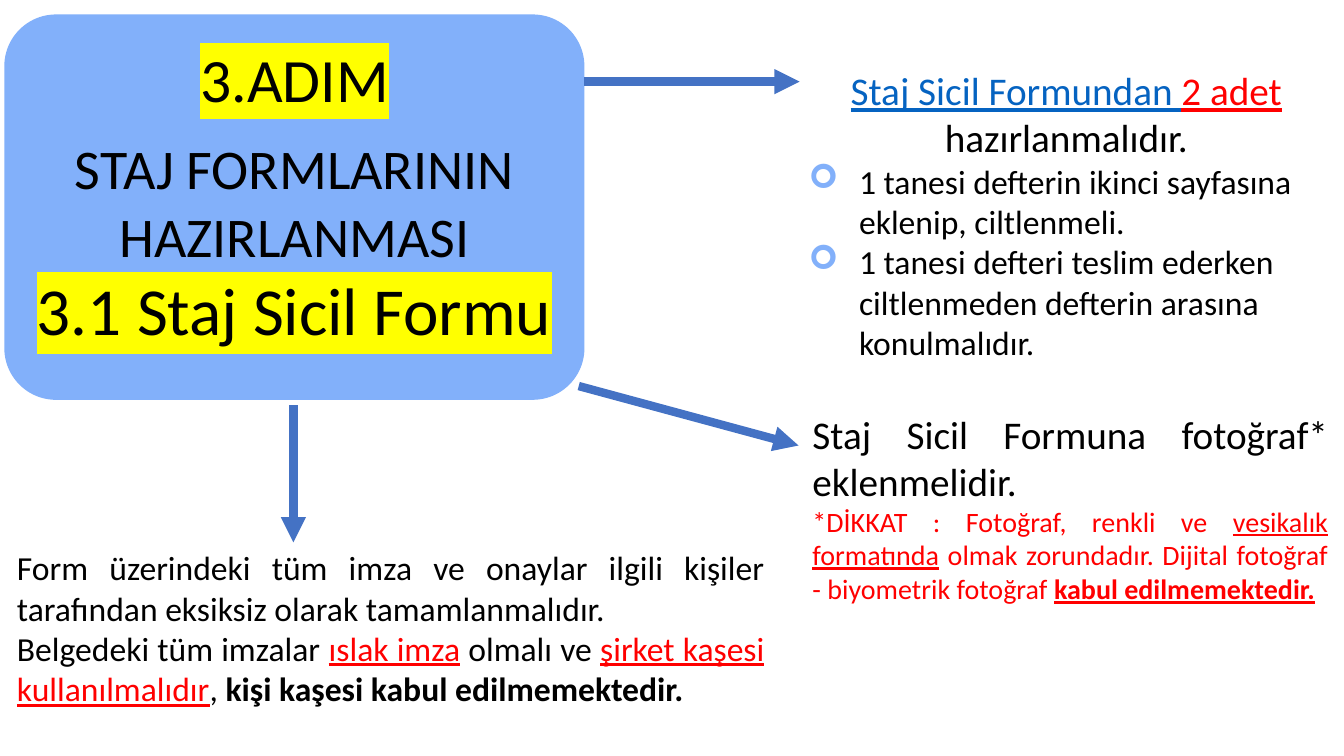
from lxml.etree import SubElement
from pptx import Presentation
from pptx.dml.color import RGBColor
from pptx.enum.shapes import MSO_CONNECTOR as Connector, MSO_SHAPE as Shape
from pptx.enum.text import MSO_ANCHOR as Anchor, MSO_AUTO_SIZE as AutoSize, PP_ALIGN as Align
from pptx.oxml.ns import qn
from pptx.util import Inches, Pt

BLACK, RED, LINK = "000000", "FF0000", "0563C1"
CARD, ARROW, YELLOW = "82B0FA", "4472C4", "FFFF00"


def colour(value):
    return RGBColor.from_string(value)


def span(text, ink=BLACK, bold=False, underline=False, mark=None):
    return text, ink, bold, underline, mark


class StepSlide:
    font = "Calibri"

    def __init__(self, deck):
        self.page = deck.slides.add_slide(deck.slide_layouts[1])
        self.title, self.body = self.page.placeholders

    def place(self, box, left, top, width, height):
        box.left, box.top = Inches(left), Inches(top)
        box.width, box.height = Inches(width), Inches(height)

    def frame(self, box, anchor=Anchor.TOP):
        frame = box.text_frame
        frame.word_wrap = True
        frame.auto_size = AutoSize.NONE
        frame.vertical_anchor = anchor
        return frame

    def add_para(self, frame, size, spans, align=Align.LEFT, bullet=None):
        """Fill the empty first paragraph, or append a new one."""
        para = frame.paragraphs[0]
        if para.runs:
            para = frame.add_paragraph()
        para.alignment = align
        para.line_spacing = 1.0
        para.space_before = para.space_after = Pt(0)
        props = para._p.get_or_add_pPr()
        indent = Inches(0.5) if bullet else 0
        props.set("marL", str(indent))
        props.set("indent", str(-indent))
        if bullet:
            tint = SubElement(props, qn("a:buClr"))
            SubElement(tint, qn("a:srgbClr"), val=CARD)
            SubElement(props, qn("a:buFont"), typeface="Wingdings")
            SubElement(props, qn("a:buChar"), char=bullet)
        else:
            SubElement(props, qn("a:buNone"))
        for text, ink, bold, underline, mark in spans:
            run = para.add_run()
            run.text = text
            font = run.font
            font.size, font.bold, font.underline = Pt(size), bold, underline
            font.color.rgb = colour(ink)
            font.name = self.font
            if mark:
                self.highlight(run, mark)
        return para

    def highlight(self, run, mark):
        props = run._r.get_or_add_rPr()
        element = SubElement(props, qn("a:highlight"))
        SubElement(element, qn("a:srgbClr"), val=mark)
        props.find(qn("a:latin")).addprevious(element)

    def card(self, *place):
        box = self.page.shapes.add_shape(Shape.ROUNDED_RECTANGLE, *map(Inches, place))
        box.adjustments[0] = 0.133
        box.shadow.inherit = False
        box.fill.solid()
        box.fill.fore_color.rgb = box.line.color.rgb = colour(CARD)
        box.line.width = Pt(1)
        frame = self.frame(box, Anchor.MIDDLE)
        frame.margin_top = Inches(0.73)  # room for the title
        return frame

    def heading(self, *place):
        """Place the title in front of the card."""
        self.place(self.title, *place)
        self.title.element.getparent().append(self.title.element)
        return self.frame(self.title, Anchor.MIDDLE)

    def list_box(self, *place):
        self.place(self.body, *place)
        return self.frame(self.body)

    def note(self, *place):
        return self.frame(self.page.shapes.add_textbox(*map(Inches, place)))

    def arrow(self, *ends):
        line = self.page.shapes.add_connector(Connector.STRAIGHT, *map(Inches, ends))
        line.line.color.rgb = colour(ARROW)
        line.line.width = Pt(6)
        SubElement(line.line._get_or_add_ln(), qn("a:tailEnd"), type="triangle")
        SubElement(line.element.spPr, qn("a:effectLst"))


def main():
    deck = Presentation()
    deck.slide_width, deck.slide_height = Inches(13.33), Inches(7.5)
    slide = StepSlide(deck)

    card = slide.card(0.05, 0.15, 5.74, 3.81)
    slide.add_para(card, 40, [span("STAJ FORMLARININ HAZIRLANMASI")], Align.CENTER)
    slide.add_para(card, 48, [span("3.1 Staj Sicil Formu", mark=YELLOW)], Align.CENTER)
    title = slide.heading(1.68, 0.09, 2.49, 1.45)
    step = slide.add_para(title, 44, [span("3.ADIM", mark=YELLOW)], Align.CENTER)
    step.line_spacing = 0.9

    copies = slide.list_box(7.92, 0.61, 5.31, 3.06)
    slide.add_para(copies, 28, [
        span("Staj Sicil Formundan ", LINK, underline=True),
        span("2 adet ", RED, underline=True),
        span("hazırlanmalıdır."),
    ], Align.CENTER)
    for item in (
        "1 tanesi defterin ikinci sayfasına eklenip, ciltlenmeli.",
        "1 tanesi defteri teslim ederken ciltlenmeden defterin arasına konulmalıdır.",
    ):
        slide.add_para(copies, 24, [span(item)], bullet="➢")

    photo = slide.note(7.96, 4.02, 5.31, 2.05)
    slide.add_para(photo, 28, [span("Staj Sicil Formuna fotoğraf* eklenmelidir. ")], Align.JUSTIFY)
    slide.add_para(photo, 20, [
        span("*DİKKAT : Fotoğraf, renkli ve ", RED),
        span("vesikalık formatında", RED, underline=True),
        span(" olmak zorundadır. Dijital fotoğraf - biyometrik fotoğraf ", RED),
        span("kabul edilmemektedir.", RED, bold=True, underline=True),
    ], Align.JUSTIFY)

    signatures = slide.note(0.07, 5.38, 7.61, 1.72)
    slide.add_para(signatures, 24, [
        span("Form üzerindeki tüm imza ve onaylar ilgili kişiler tarafından "
             "eksiksiz olarak tamamlanmalıdır. "),
    ], Align.JUSTIFY)
    slide.add_para(signatures, 24, [
        span("Belgedeki tüm imzalar "),
        span("ıslak imza", RED, underline=True),
        span(" olmalı ve "),
        span("şirket kaşesi kullanılmalıdır", RED, underline=True),
        span(", "),
        span("kişi kaşesi kabul edilmemektedir.", bold=True),
    ], Align.JUSTIFY)

    slide.arrow(5.79, 0.81, 7.93, 0.81)
    slide.arrow(2.91, 4.02, 2.91, 5.38)
    slide.arrow(5.74, 3.83, 7.92, 4.42)
    deck.save("out.pptx")


if __name__ == "__main__":
    main()
